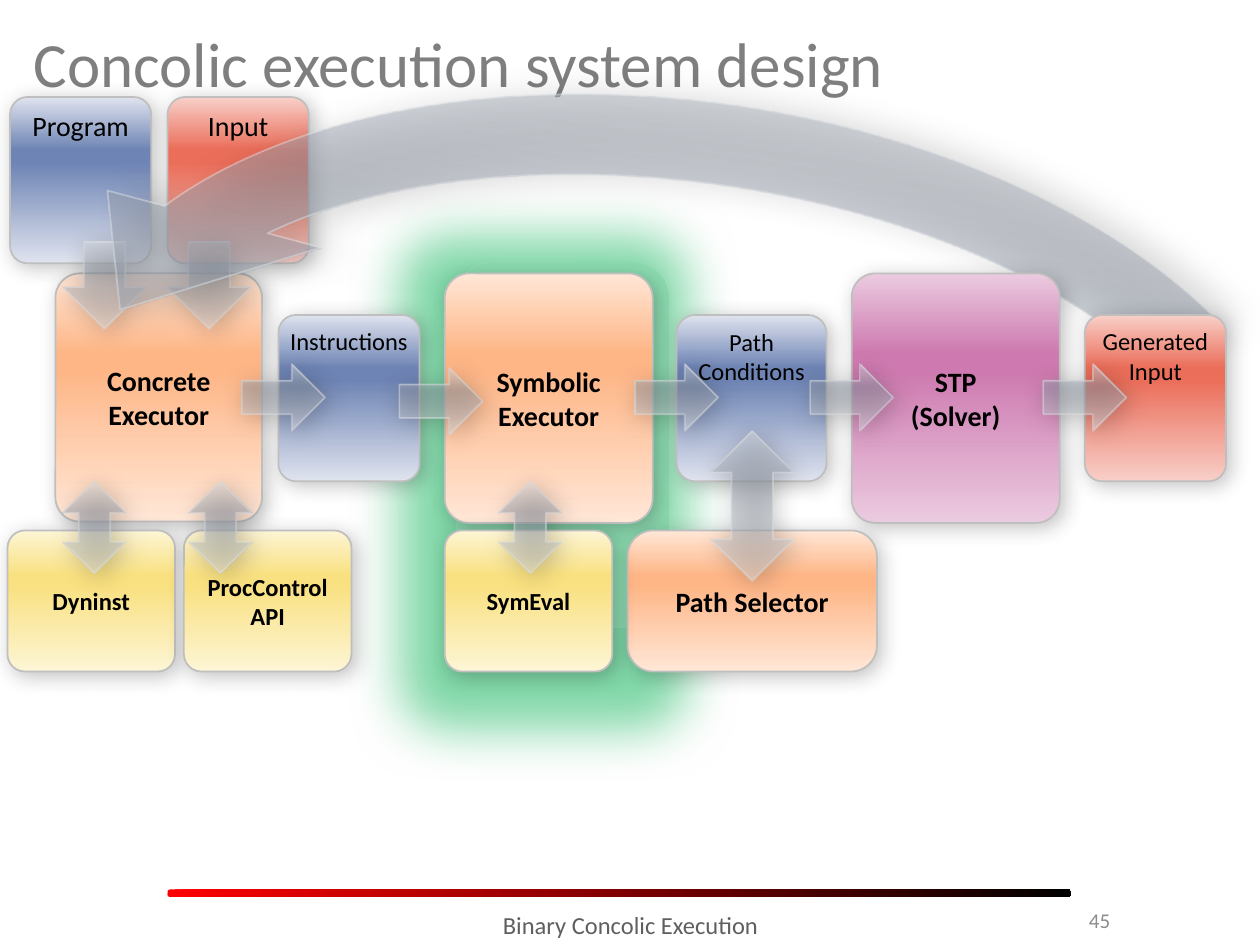
from dataclasses import dataclass

import lxml.etree
import pptx
import pptx.dml.color
import pptx.enum.shapes
import pptx.enum.text
import pptx.oxml.ns
import pptx.util

Inches = pptx.util.Inches
SHAPE = pptx.enum.shapes.MSO_SHAPE
ALIGN = pptx.enum.text.PP_ALIGN
ANCHOR = pptx.enum.text.MSO_ANCHOR


@dataclass(frozen=True)
class Theme:
    font: str = "Calibri"
    title_size: int = 36
    main_size: int = 16
    label_size: int = 14
    number_size: int = 12
    title: str = "7F7F7F"
    footer: str = "5F5F5F"
    number: str = "8C8C8C"
    text: str = "000000"
    border: str = "BFBFBF"
    shadow: str = "000000"
    glow: str = "00B050"
    panel: str = "FFFFFF"
    rule: tuple = ("FF0000", "000000")
    # Each pair below is the outer and the middle colour of a banded gradient.
    orange: tuple = ("FFE7D7", "FEB687")
    blue: tuple = ("DFE3EE", "6E84B4")
    red: tuple = ("F8CFC8", "EB6E5A")
    purple: tuple = ("EBCBE0", "CE7AB0")
    yellow: tuple = ("FDF5D5", "F9E181")
    arrow: tuple = ("DCDFE3", "969EAB")


THEME = Theme()


def rgb(color):
    return pptx.dml.color.RGBColor.from_string(color)


def sub(parent, tag, **attributes):
    return lxml.etree.SubElement(parent, pptx.oxml.ns.qn(tag),
                                 {key: str(value) for key, value in attributes.items()})


def add_color(parent, color, opacity=100):
    element = sub(parent, "a:srgbClr", val=color)
    if opacity < 100:
        sub(element, "a:alpha", val=opacity * 1000)


def set_gradient(shape, stops, angle, opacity=100):
    shape.fill.gradient()
    shape.fill.gradient_angle = angle
    stop_list = shape.element.spPr.find(".//" + pptx.oxml.ns.qn("a:gsLst"))
    for stop in list(stop_list):
        stop_list.remove(stop)
    for position, color in stops:
        add_color(sub(stop_list, "a:gs", pos=position * 1000), color, opacity)


def set_bands(shape, colors, middle_end, opacity=100):
    edge, middle = colors
    stops = [(0, edge), (32, middle), (middle_end, middle), (100, edge)]
    set_gradient(shape, stops, 270, opacity)


def set_shadow(shape, color, opacity, blur, distance, direction, scale=100):
    effects = shape.element.spPr.find(pptx.oxml.ns.qn("a:effectLst"))
    shadow = sub(effects, "a:outerShdw", blurRad=pptx.util.Pt(blur), dist=pptx.util.Pt(distance),
                 dir=direction * 60000, sx=scale * 1000, sy=scale * 1000,
                 algn="tl", rotWithShape=0)
    add_color(shadow, color, opacity)


def add_shape(slide, kind, box, adjustments=()):
    shape = slide.shapes.add_shape(kind, *map(Inches, box))
    shape.shadow.inherit = False
    for index, value in enumerate(adjustments):
        shape.adjustments[index] = value
    return shape


def write(frame, text, size, color, align, anchor, bold=False):
    frame.word_wrap = True
    frame.vertical_anchor = anchor
    frame.text = text
    paragraph = frame.paragraphs[0]
    paragraph.alignment = align
    paragraph.font.name = THEME.font
    paragraph.font.size = pptx.util.Pt(size)
    paragraph.font.bold = bold
    paragraph.font.color.rgb = rgb(color)


def add_text(slide, box, *style):
    write(slide.shapes.add_textbox(*map(Inches, box)).text_frame, *style)


def add_node(slide, box, text, colors, size=THEME.main_size, bold=False,
             corner=0.124, narrow=False):
    """Bold nodes hold components, with centred text; the others hold data, with text at the top."""
    node = add_shape(slide, SHAPE.ROUNDED_RECTANGLE, box, [corner])
    set_bands(node, colors, 39)
    node.line.color.rgb = rgb(THEME.border)
    node.line.width = pptx.util.Pt(1)
    set_shadow(node, THEME.shadow, 23, 12, 3, 45)
    if narrow:
        node.text_frame.margin_left = node.text_frame.margin_right = 0
    anchor = ANCHOR.MIDDLE if bold else ANCHOR.TOP
    write(node.text_frame, text, size, THEME.text, ALIGN.CENTER, anchor, bold)


def add_arrow(slide, kind, box, adjustments=(), shadow=(40, 14, 3, 45)):
    arrow = add_shape(slide, kind, box, adjustments)
    set_bands(arrow, THEME.arrow, 38, 50)
    arrow.line.color.rgb = rgb(THEME.arrow[0])
    arrow.line.width = pptx.util.Pt(1)
    line_color = arrow.element.spPr.find(
        pptx.oxml.ns.qn("a:ln")).find(".//" + pptx.oxml.ns.qn("a:srgbClr"))
    sub(line_color, "a:alpha", val=50000)
    set_shadow(arrow, THEME.shadow, *shadow)
    return arrow


def add_footer(slide, left, top):
    rule = add_shape(slide, SHAPE.ROUNDED_RECTANGLE, (left, top, 7.17, 0.06), [0.333])
    set_gradient(rule, zip((0, 100), THEME.rule), 0)
    rule.line.fill.background()
    add_text(slide, (left + 6.25, top + 0.04, 1.33, 0.4), "45",
             THEME.number_size, THEME.number, ALIGN.RIGHT, ANCHOR.MIDDLE)
    add_text(slide, (left + 1.09, top + 0.11, 5.17, 0.33), "Binary Concolic Execution",
             THEME.label_size, THEME.footer, ALIGN.CENTER, ANCHOR.TOP)


def add_highlight(slide, box):
    """Green glow behind the symbolic part of the system."""
    base, tint = (add_shape(slide, SHAPE.ROUNDED_RECTANGLE, box) for _ in range(2))
    for panel, color in ((base, THEME.panel), (tint, THEME.glow)):
        panel.fill.solid()
        panel.fill.fore_color.rgb = rgb(color)
        panel.line.fill.background()
    set_shadow(base, THEME.glow, 50, 30, 36, 205, scale=135)
    tint_color = tint.element.spPr.find(".//" + pptx.oxml.ns.qn("a:srgbClr"))
    sub(tint_color, "a:alpha", val=45000)


def add_input_stage(slide, left, top):
    add_node(slide, (left + 0.36, top + 1.4, 1.64, 1.97), "Concrete Executor", THEME.orange,
             bold=True, corner=0.118)
    for x, text, colors in ((0, "Program", THEME.blue), (1.25, "Input", THEME.red)):
        add_node(slide, (left + x, top, 1.12, 1.32), text, colors)
    for x in (0.42, 1.25):
        add_arrow(slide, SHAPE.DOWN_ARROW, (left + x, top + 1.15, 0.66, 0.69))


def add_feedback_loop(slide, box):
    loop = add_arrow(slide, SHAPE.CIRCULAR_ARROW, box,
                     [0.094, 7.346, 204.56, 121.583, 0.129], (31, 21, 13, 4))
    loop.rotation = 8.1
    loop.element.spPr.xfrm.set("flipH", "1")


def add_pipeline(slide, left, top):
    for x, width, text, colors, narrow in (
            (0, 1.12, "Instructions", THEME.blue, True),
            (6.4, 1.12, "Generated Input", THEME.red, True),
            (3.16, 1.19, "Path Conditions", THEME.blue, False)):
        add_node(slide, (left + x, top + 0.33, width, 1.32), text, colors,
                 THEME.label_size, narrow=narrow)
    for x, text, colors, corner in ((1.32, "Symbolic Executor", THEME.orange, 0.118),
                                    (4.55, "STP\v(Solver)", THEME.purple, 0.113)):
        add_node(slide, (left + x, top, 1.65, 1.98), text, colors, bold=True, corner=corner)
    for x, y in ((-0.29, 0.72), (0.96, 0.75), (2.83, 0.72), (4.22, 0.72), (6.07, 0.72)):
        add_arrow(slide, SHAPE.RIGHT_ARROW, (left + x, top + y, 0.66, 0.53))


def add_support_row(slide, left, top):
    add_node(slide, (left + 4.92, top, 1.98, 1.12), "Path Selector", THEME.orange,
             bold=True, corner=0.184)
    for x, text in ((0, "Dyninst"), (1.4, "ProcControl\vAPI"), (3.47, "SymEval")):
        add_node(slide, (left + x, top, 1.33, 1.12), text, THEME.yellow,
                 THEME.label_size, bold=True, narrow=True)
    add_arrow(slide, SHAPE.UP_DOWN_ARROW, (left + 5.58, top - 0.79, 0.66, 1.19))
    for x in (0.44, 1.44, 3.9):
        add_arrow(slide, SHAPE.UP_DOWN_ARROW, (left + x, top - 0.39, 0.5, 0.73))


def main():
    deck = pptx.Presentation()
    deck.slide_width, deck.slide_height = Inches(10), Inches(7.5)
    slide = deck.slides.add_slide(deck.slide_layouts[6])
    add_highlight(slide, (3.62, 2.08, 1.69, 2.9))
    add_text(slide, (0.17, 0.08, 9.67, 0.83), "Concolic execution system design",
             THEME.title_size, THEME.title, ALIGN.LEFT, ANCHOR.MIDDLE)
    add_footer(slide, 1.33, 7.06)
    add_input_stage(slide, 0.08, 0.77)
    add_feedback_loop(slide, (-0.16, 0.25, 11.17, 6.8))
    add_pipeline(slide, 2.21, 2.17)
    add_support_row(slide, 0.06, 4.21)
    deck.save("out.pptx")


if __name__ == "__main__":
    main()
